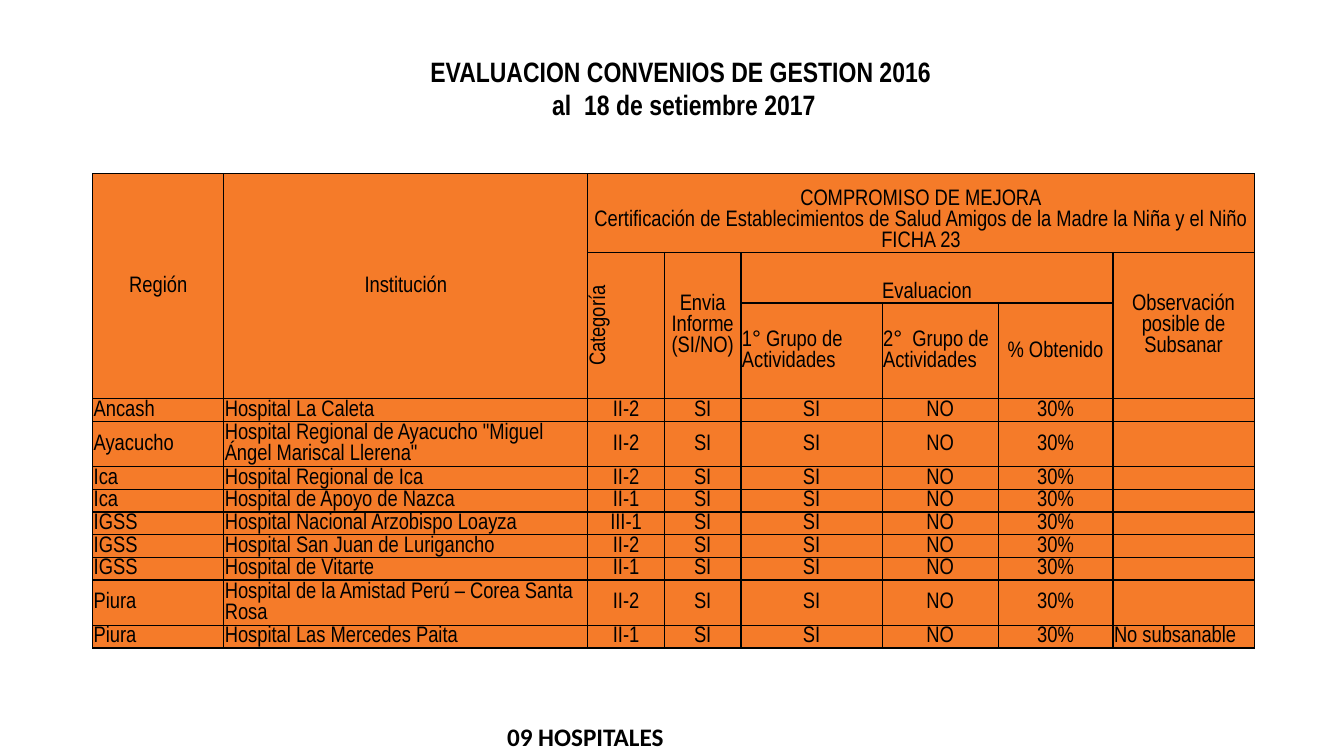
from dataclasses import dataclass

from lxml import etree
from pptx import Presentation
from pptx.dml.color import RGBColor
from pptx.enum.text import MSO_ANCHOR, PP_ALIGN
from pptx.oxml.ns import qn
from pptx.util import Inches, Pt

LEFT, MID = PP_ALIGN.LEFT, PP_ALIGN.CENTER
CENTER, BOTTOM = MSO_ANCHOR.MIDDLE, MSO_ANCHOR.BOTTOM
BLANK = 6


@dataclass(frozen=True)
class Theme:
    """Colours, fonts and sizes of the slide."""
    ink: str = "000000"
    fill: str = "F57B29"
    face: str = "Arial Narrow"
    foot: str = "Calibri"
    title: int = 20
    note: int = 18
    body: int = 16
    lead: int = 15
    rule: int = 1


THEME = Theme()
WIDE, HIGH = 13.33, 7.5
COLS = [1.3, 3.61, 0.76, 0.76, 1.4, 1.15, 1.14, 1.4]
HEADS = [0.78, 0.5, 0.95]
LINE = 0.225
WRAP = 40

HEADER = [
    (0, 0, 3, 1, "Región", MID, CENTER),
    (0, 1, 3, 1, "Institución", MID, CENTER),
    (0, 2, 1, 6, "COMPROMISO DE MEJORA\nCertificación de Establecimientos de Salud "
     "Amigos de la Madre la Niña y el Niño\nFICHA 23", MID, BOTTOM),
    (1, 2, 2, 1, "Categoría", MID, CENTER),
    (1, 3, 2, 1, "Envia Informe\n(SI/NO)", MID, CENTER),
    (1, 4, 1, 3, "Evaluacion", MID, BOTTOM),
    (1, 7, 2, 1, "Observación posible de Subsanar", MID, CENTER),
    (2, 4, 1, 1, "1° Grupo de Actividades", LEFT, CENTER),
    (2, 5, 1, 1, "2°  Grupo de Actividades", LEFT, CENTER),
    (2, 6, 1, 1, "% Obtenido", MID, CENTER),
]
SITES = [
    ("Ancash", "Hospital La Caleta", "II-2", ""),
    ("Ayacucho", 'Hospital Regional de Ayacucho "Miguel Ángel Mariscal Llerena"', "II-2", ""),
    ("Ica", "Hospital Regional de Ica", "II-2", ""),
    ("Ica", "Hospital de Apoyo de Nazca", "II-1", ""),
    ("IGSS", "Hospital Nacional Arzobispo Loayza", "III-1", ""),
    ("IGSS", "Hospital San Juan de Lurigancho", "II-2", ""),
    ("IGSS", "Hospital de Vitarte", "II-1", ""),
    ("Piura", "Hospital de la Amistad Perú – Corea Santa Rosa", "II-2", ""),
    ("Piura", "Hospital Las Mercedes Paita", "II-1", "No subsanable"),
]
SCORE = ("SI", "SI", "NO", "30%")


def style(para, face, size, bold=False, align=MID):
    """Set the font and alignment of a paragraph."""
    para.alignment = align
    font = para.font
    font.name, font.size, font.bold = face, Pt(size), bold
    font.color.rgb = RGBColor.from_string(THEME.ink)


def label(slide, box, lines, face, size):
    """Add a bold centred text box, its box in shares of the slide."""
    left, top, width, height = box
    shape = slide.shapes.add_textbox(
        Inches(left * WIDE), Inches(top * HIGH), Inches(width * WIDE), Inches(height * HIGH))
    frame = shape.text_frame
    frame.word_wrap = True
    frame.text = "\n".join(lines)
    for para in frame.paragraphs:
        style(para, face, size, bold=True)


def border(cell):
    """Draw the four sides of a cell."""
    props = cell._tc.get_or_add_tcPr()
    for spot, side in enumerate(("lnL", "lnR", "lnT", "lnB")):
        line = etree.Element(qn("a:" + side), w=str(Pt(THEME.rule)))
        paint = etree.SubElement(line, qn("a:solidFill"))
        etree.SubElement(paint, qn("a:srgbClr"), val=THEME.ink)
        props.insert(spot, line)


def dress(cell):
    """Give a cell its fill, borders and margins."""
    cell.fill.solid()
    cell.fill.fore_color.rgb = RGBColor.from_string(THEME.fill)
    border(cell)
    cell.margin_left = cell.margin_right = cell.margin_top = Inches(0.01)
    cell.margin_bottom = 0
    write(cell, "", LEFT, CENTER)


def write(cell, text, align, anchor):
    """Put text in a cell."""
    cell.vertical_anchor = anchor
    para = cell.text_frame.paragraphs[0]
    para.text = text
    para.line_spacing = Pt(THEME.lead)
    style(para, THEME.face, THEME.body, align=align)


def head(table):
    """Merge and write the header cells."""
    for row, col, down, over, text, align, anchor in HEADER:
        cell = table.cell(row, col)
        if down * over > 1:
            cell.merge(table.cell(row + down - 1, col + over - 1))
        write(cell, text, align, anchor)
    table.cell(1, 2)._tc.get_or_add_tcPr().set("vert", "vert270")


def body(table):
    """Write one row for each hospital."""
    for row, (region, site, rank, note) in enumerate(SITES, len(HEADS)):
        for col, text in enumerate((region, site, rank, *SCORE, note)):
            align = MID if 2 <= col <= 6 else LEFT
            write(table.cell(row, col), text, align, CENTER)


def grid(slide):
    """Add the table of hospitals."""
    rows = HEADS + [LINE * (2 if len(site[1]) > WRAP else 1) for site in SITES]
    frame = slide.shapes.add_table(
        len(rows), len(COLS), Inches(0.069 * WIDE), Inches(0.23 * HIGH),
        Inches(sum(COLS)), Inches(sum(rows)))
    table = frame.table
    table.first_row = table.horz_banding = False
    for col, width in zip(table.columns, COLS):
        col.width = Inches(width)
    for row, height in zip(table.rows, rows):
        row.height = Inches(height)
    for cell in table.iter_cells():
        dress(cell)
    head(table)
    body(table)


def main():
    """Build and save the slide."""
    deck = Presentation()
    deck.slide_width, deck.slide_height = Inches(WIDE), Inches(HIGH)
    slide = deck.slides.add_slide(deck.slide_layouts[BLANK])
    grid(slide)
    label(slide, (0.205, 0.065, 0.603, 0.103),
          ("EVALUACION CONVENIOS DE GESTION 2016", " al  18 de setiembre 2017"),
          THEME.face, THEME.title)
    label(slide, (0.312, 0.948, 0.247, 0.055), ("09 HOSPITALES",), THEME.foot, THEME.note)
    deck.save("out.pptx")


if __name__ == "__main__":
    main()
